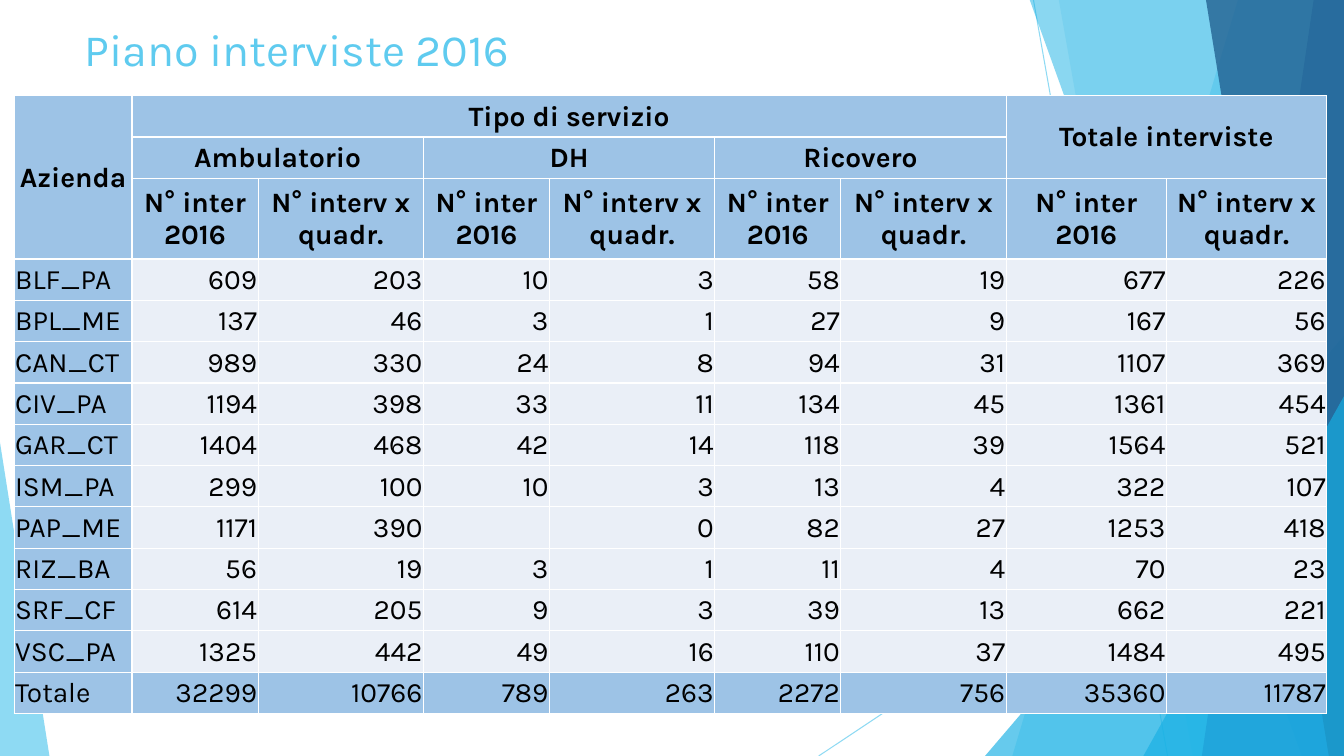
from lxml import etree
from pptx import Presentation
from pptx import util as u
from pptx.dml.color import RGBColor
from pptx.enum import shapes, text
from pptx.oxml import ns

SKY = RGBColor(0x5F, 0xCB, 0xEF)
AZURE = RGBColor(0x17, 0xB0, 0xE4)
BLUE = RGBColor(0x2E, 0x83, 0xC3)
NAVY = RGBColor(0x23, 0x62, 0x92)
HEADER_FILL = RGBColor(0x9D, 0xC3, 0xE6)
BODY_FILL = RGBColor(0xEA, 0xEF, 0xF7)
BLACK = RGBColor(0, 0, 0)
WHITE = RGBColor(0xFF, 0xFF, 0xFF)

LEFT, CENTER, RIGHT = text.PP_ALIGN.LEFT, text.PP_ALIGN.CENTER, text.PP_ALIGN.RIGHT

RAYS = [((10.25, 0), (11.58, 7.5)), ((13.33, 4.03), (8.12, 7.5))]
FACETS = [
    (SKY, 36, [(12.28, -0.01), (13.33, -0.01), (13.33, 7.5), (10.04, 7.5)]),
    (SKY, 20, [(10.5, -0.01), (13.33, -0.01), (13.33, 7.5), (11.83, 7.5)]),
    (AZURE, 66, [(9.77, 7.5), (13.33, 3.33), (13.33, 7.5)]),
    (AZURE, 50, [(10.21, -0.01), (13.33, -0.01), (13.33, 7.5), (12.91, 7.5)]),
    (BLUE, 70, [(13.03, -0.01), (13.33, -0.01), (13.33, 7.5), (11.92, 7.5)]),
    (NAVY, 80, [(11.96, -0.01), (13.33, -0.01), (13.33, 7.5), (13.18, 7.5)]),
    (AZURE, 66, [(11.34, 7.5), (13.33, 3.93), (13.33, 7.5)]),
    (SKY, 70, [(0, 7.5), (0, 4.39), (0.49, 7.5)]),
]

COLUMN_WIDTHS = [1.17] + [1.25, 1.64] * 3 + [1.59] * 2
ROW_HEIGHTS = [0.41] * 2 + [0.8] + [0.41] * 11
HEADER_ROWS = 3
# First row, first column, last row, last column
MERGES = [(0, 0, 2, 0), (0, 1, 0, 6), (0, 7, 1, 8),
          (1, 1, 1, 2), (1, 3, 1, 4), (1, 5, 1, 6)]
ROWS = [
    ["Azienda", "Tipo di servizio", "", "", "", "", "", "Totale interviste", ""],
    ["", "Ambulatorio", "", "DH", "", "Ricovero", "", "", ""],
    [""] + ["N° inter 2016", "N° interv x quadr."] * 4,
    ["BLF_PA", 609, 203, 10, 3, 58, 19, 677, 226],
    ["BPL_ME", 137, 46, 3, 1, 27, 9, 167, 56],
    ["CAN_CT", 989, 330, 24, 8, 94, 31, 1107, 369],
    ["CIV_PA", 1194, 398, 33, 11, 134, 45, 1361, 454],
    ["GAR_CT", 1404, 468, 42, 14, 118, 39, 1564, 521],
    ["ISM_PA", 299, 100, 10, 3, 13, 4, 322, 107],
    ["PAP_ME", 1171, 390, "", 0, 82, 27, 1253, 418],
    ["RIZ_BA", 56, 19, 3, 1, 11, 4, 70, 23],
    ["SRF_CF", 614, 205, 9, 3, 39, 13, 662, 221],
    ["VSC_PA", 1325, 442, 49, 16, 110, 37, 1484, 495],
    ["Totale", 32299, 10766, 789, 263, 2272, 756, 35360, 11787],
]


def write_text(frame, words, *, size, color, font, bold=False, align=LEFT):
    paragraph = frame.paragraphs[0]
    paragraph.alignment = align
    run = paragraph.add_run()
    run.text = words
    run.font.name = font
    run.font.size = u.Pt(size)
    run.font.bold = bold
    run.font.color.rgb = color


def set_opacity(element, percent):
    color = element.find(".//" + ns.qn("a:srgbClr"))
    etree.SubElement(color, ns.qn("a:alpha"), val=str(percent * 1000))


def add_borders(cell, color, points):
    """Draw all four borders; call before the cell gets its fill."""
    properties = cell._tc.get_or_add_tcPr()
    for side in ("lnL", "lnR", "lnT", "lnB"):
        line = etree.SubElement(properties, ns.qn("a:" + side), w=str(u.Pt(points)))
        fill = etree.SubElement(line, ns.qn("a:solidFill"))
        etree.SubElement(fill, ns.qn("a:srgbClr"), val=str(color))


class SlideBuilder:
    font = "Karla"

    def __init__(self, slide):
        self.slide = slide

    def ray(self, start, end):
        points = [u.Inches(value) for value in start + end]
        line = self.slide.shapes.add_connector(shapes.MSO_CONNECTOR.STRAIGHT, *points)
        line.line.color.rgb = SKY
        line.line.width = u.Pt(0.75)
        set_opacity(line.line._ln, 70)
        etree.SubElement(line._element.spPr, ns.qn("a:effectLst"))

    def facet(self, color, opacity, corners):
        points = [(u.Inches(x), u.Inches(y)) for x, y in corners]
        builder = self.slide.shapes.build_freeform(*points[0])
        builder.add_line_segments(points[1:], close=True)
        shape = builder.convert_to_shape()
        shape.shadow.inherit = False
        shape.fill.solid()
        shape.fill.fore_color.rgb = color
        set_opacity(shape._element.spPr, opacity)
        shape.line.fill.background()

    def title(self, words, left, top, width, height):
        box = self.slide.shapes.add_textbox(*map(u.Inches, (left, top, width, height)))
        frame = box.text_frame
        frame.word_wrap = True
        frame.margin_top = u.Inches(0.1)
        write_text(frame, words, size=32, color=SKY, font=self.font)

    def table(self, left, top):
        frame = self.slide.shapes.add_table(
            len(ROWS), len(COLUMN_WIDTHS), u.Inches(left), u.Inches(top),
            u.Inches(sum(COLUMN_WIDTHS)), u.Inches(sum(ROW_HEIGHTS)))
        table = frame.table
        table.first_row = table.horz_banding = False
        for column, width in zip(table.columns, COLUMN_WIDTHS):
            column.width = u.Inches(width)
        for row, height in zip(table.rows, ROW_HEIGHTS):
            row.height = u.Inches(height)
        for row, values in enumerate(ROWS):
            for column, value in enumerate(values):
                self.cell(table.cell(row, column), row, column, str(value))
        for first_row, first_column, last_row, last_column in MERGES:
            table.cell(first_row, first_column).merge(table.cell(last_row, last_column))

    def cell(self, cell, row, column, words):
        is_header = row < HEADER_ROWS
        is_dark = is_header or column == 0 or row == len(ROWS) - 1
        cell.vertical_anchor = text.MSO_ANCHOR.MIDDLE
        cell.margin_left = cell.margin_top = cell.margin_right = u.Inches(0.01)
        cell.margin_bottom = 0
        add_borders(cell, WHITE, 1)
        cell.fill.solid()
        cell.fill.fore_color.rgb = HEADER_FILL if is_dark else BODY_FILL
        if words:
            align = CENTER if is_header else RIGHT if column else LEFT
            write_text(cell.text_frame, words, size=20, color=BLACK,
                       font=self.font, bold=is_header, align=align)


def main():
    presentation = Presentation()
    presentation.slide_width = u.Inches(13.33)
    presentation.slide_height = u.Inches(7.5)
    builder = SlideBuilder(presentation.slides.add_slide(presentation.slide_layouts[6]))
    for start, end in RAYS:
        builder.ray(start, end)
    for color, opacity, corners in FACETS:
        builder.facet(color, opacity, corners)
    builder.title("Piano interviste 2016", 0.74, 0.12, 9.4, 0.59)
    builder.table(0.14, 0.95)
    presentation.save("out.pptx")


if __name__ == "__main__":
    main()
